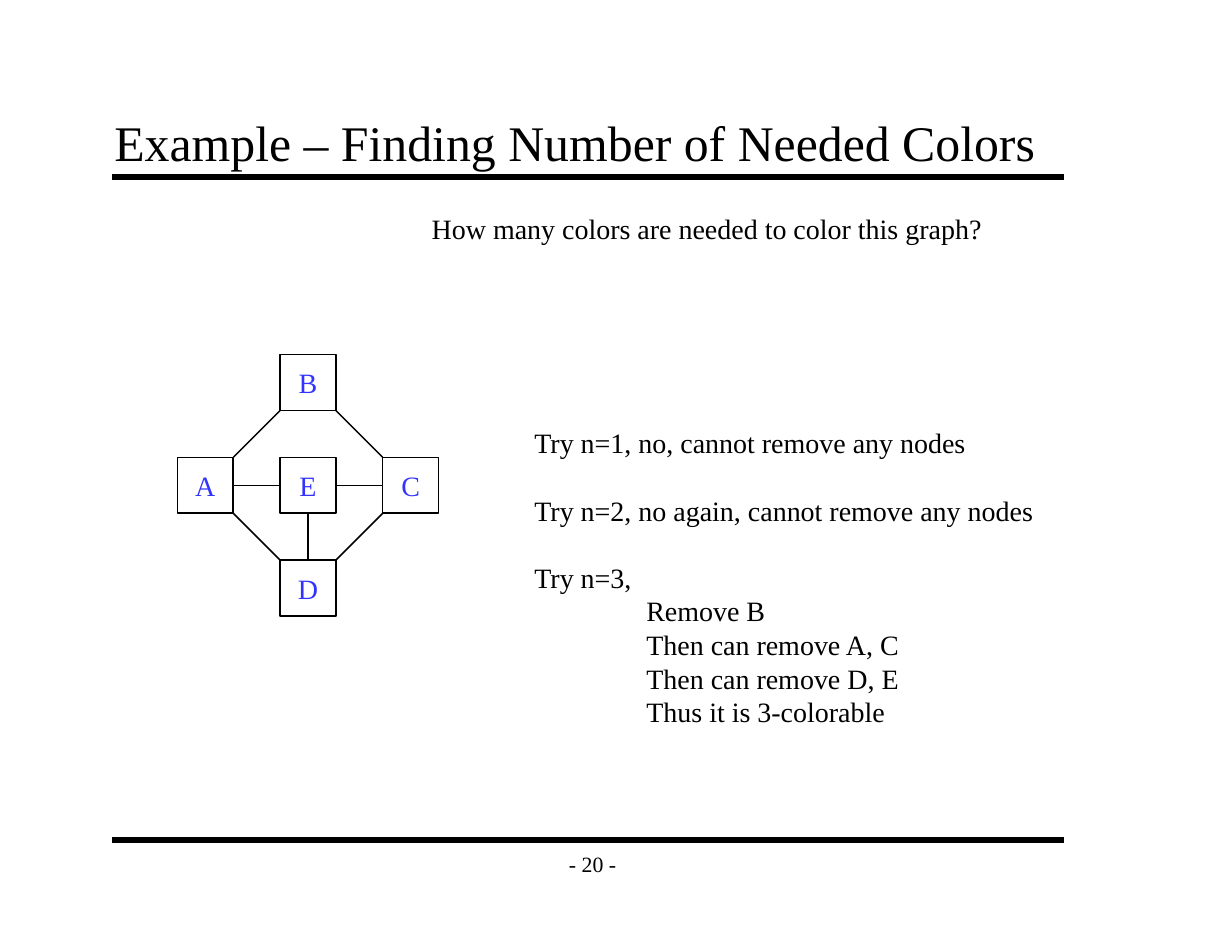
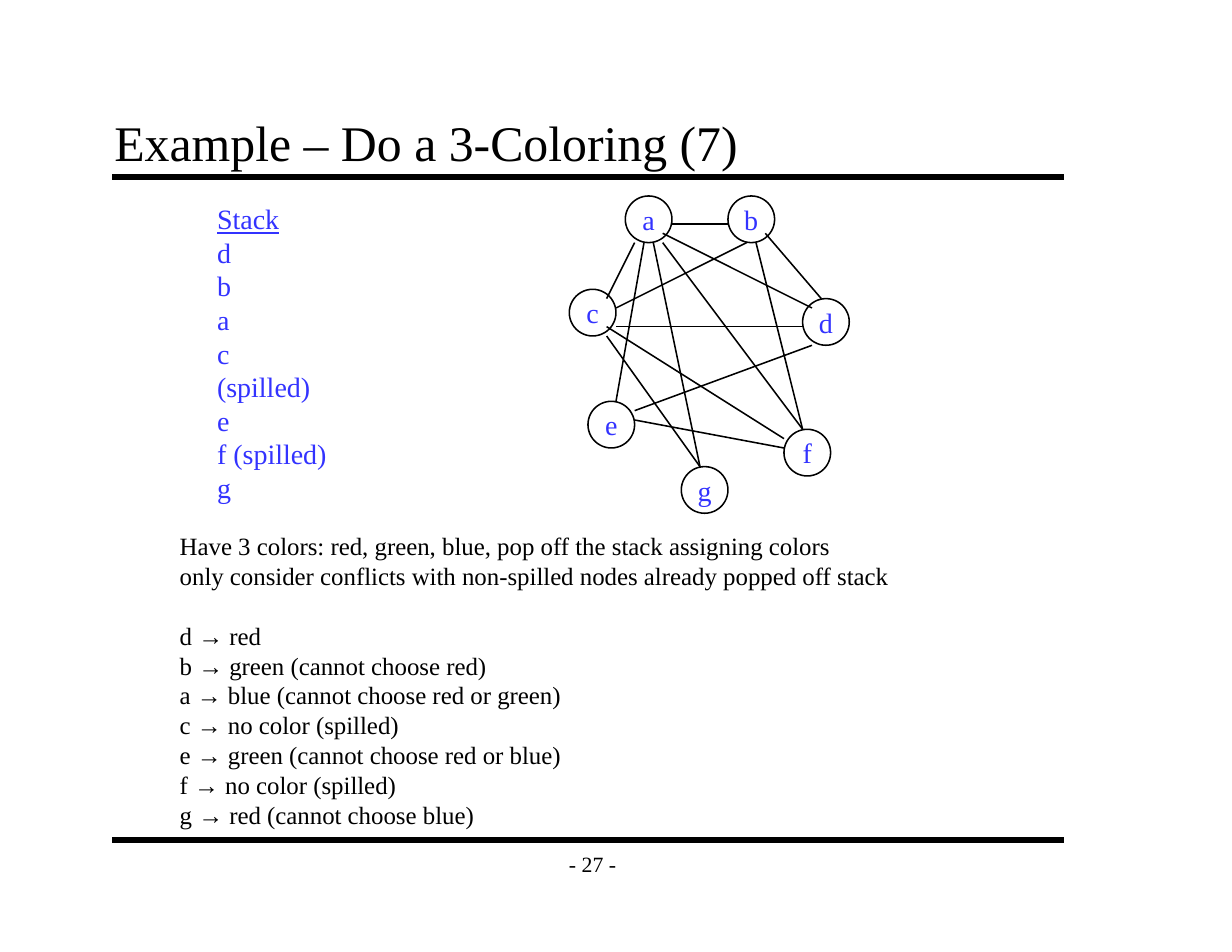
"""Builds two slides on graph coloring: counting the needed colors and a 3-coloring."""
from dataclasses import dataclass

from lxml import etree
from pptx import Presentation
from pptx.dml.color import RGBColor
from pptx.enum.shapes import MSO_CONNECTOR, MSO_SHAPE
from pptx.enum.text import MSO_ANCHOR, PP_ALIGN
from pptx.oxml.ns import qn
from pptx.util import Emu, Pt

STRAIGHT = MSO_CONNECTOR.STRAIGHT
SQUARE, CIRCLE = MSO_SHAPE.RECTANGLE, MSO_SHAPE.OVAL
TOP, MIDDLE, BOTTOM = MSO_ANCHOR.TOP, MSO_ANCHOR.MIDDLE, MSO_ANCHOR.BOTTOM
LEFT, CENTER = PP_ALIGN.LEFT, PP_ALIGN.CENTER
PX = 9525
GRID = 8


@dataclass(frozen=True)
class Theme:
    font: str = "Times New Roman"
    ink: RGBColor = RGBColor(0x00, 0x00, 0x00)
    accent: RGBColor = RGBColor(0x33, 0x33, 0xFF)
    title: int = 32
    body: int = 18
    detail: int = 16
    footer: int = 14
    leading: float = 1.2
    rule: int = 4
    edge: int = 1


THEME = Theme()


def add_text(slide, box, lines, size, color=THEME.ink, align=LEFT, anchor=TOP,
             inset=(10, 5), outline=None):
    """Write one paragraph per line, in a text box or an outlined shape."""
    place = [Emu(value * PX) for value in box]
    if outline is None:
        holder = slide.shapes.add_textbox(*place)
    else:
        holder = slide.shapes.add_shape(outline, *place)
        holder.shadow.inherit = False
        holder.fill.background()
        holder.line.color.rgb = THEME.ink
        holder.line.width = Pt(THEME.edge)
    frame = holder.text_frame
    frame.word_wrap = False
    frame.vertical_anchor = anchor
    frame.margin_left = frame.margin_right = Emu(inset[0] * PX)
    frame.margin_top = frame.margin_bottom = Emu(inset[1] * PX)
    frame.text = "\n".join(lines)
    for paragraph in frame.paragraphs:
        paragraph.alignment = align
        paragraph.line_spacing = Pt(size * THEME.leading)
        paragraph.font.name = THEME.font
        paragraph.font.size = Pt(size)
        paragraph.font.color.rgb = color
    return frame.paragraphs


def add_line(slide, x1, y1, x2, y2, width):
    """Draw a straight line without a shadow."""
    line = slide.shapes.add_connector(STRAIGHT, *(Emu(v * PX) for v in (x1, y1, x2, y2)))
    line.line.color.rgb = THEME.ink
    line.line.width = Pt(width)
    etree.SubElement(line._element.spPr, qn("a:effectLst"))


deck = Presentation()
deck.slide_width, deck.slide_height = Emu(1056 * PX), Emu(816 * PX)

slides = []
for title, number in (("Example – Finding Number of Needed Colors", 20),
                      ("Example – Do a 3-Coloring (7)", 27)):
    slide = deck.slides.add_slide(deck.slide_layouts[6])
    for rule_y in (152, 720):
        add_line(slide, 96, rule_y, 912, rule_y, THEME.rule)
    add_text(slide, (472, 720, 72, 40), [f"- {number} -"], THEME.footer,
             align=CENTER, anchor=MIDDLE)
    heading = add_text(slide, (88, 88, 832, 64), [title], THEME.title, anchor=BOTTOM)
    slides.append(slide)
counting, coloring = slides

SIDE, STEP = 48, 88
HALF = SIDE // 2
cells = {"A": (0, 1), "B": (1, 0), "E": (1, 1), "D": (1, 2), "C": (2, 1)}
for name, (column, row) in cells.items():
    add_text(counting, (152 + column * STEP, 304 + row * STEP, SIDE, SIDE), [name],
             THEME.body, THEME.accent, CENTER, MIDDLE, outline=SQUARE)
for start, end in ("AB", "BC", "AD", "DC", "AE", "EC", "ED"):
    (column, row), (end_column, end_row) = cells[start], cells[end]
    across, down = end_column - column, end_row - row
    x = 152 + HALF + column * STEP + across * HALF
    y = 304 + HALF + row * STEP + down * HALF
    gap = STEP - SIDE
    add_line(counting, x, y, x + across * gap, y + down * gap, THEME.edge)

add_text(counting, (360, 176, 492, 38),
         ["How many colors are needed to color this graph?"], THEME.body)
attempts = add_text(counting, (448, 360, 448, 269), [
    "Try n=1, no, cannot remove any nodes",
    "Try n=2, no again, cannot remove any nodes",
    "Try n=3,",
    "Remove B",
    "Then can remove A, C",
    "Then can remove D, E",
    "Thus it is 3-colorable",
], THEME.body)
for attempt in attempts[1:3]:
    attempt.space_before = Pt(THEME.body * THEME.leading)
for removal in attempts[3:]:
    removal._p.get_or_add_pPr().set("marL", str(96 * PX))

stack = add_text(coloring, (176, 168, 116, 240),
                 ["Stack", "d", "b", "a", "c (spilled)", "e", "f (spilled)", "g"],
                 THEME.body, THEME.accent)
stack[0].font.underline = True

nodes = {"a": (67, 21), "b": (78, 21), "c": (61, 31), "d": (86, 32),
         "e": (63, 43), "f": (84, 46), "g": (73, 50)}
for name, (column, row) in nodes.items():
    add_text(coloring, (column * GRID, row * GRID, 5 * GRID, 5 * GRID), [name],
             THEME.body, THEME.accent, CENTER, MIDDLE, outline=CIRCLE)
conflicts = [
    (65, 32, 68, 26), (66, 33, 80, 26), (66, 35, 86, 35), (65, 35, 84, 47),
    (65, 36, 75, 50), (72, 24, 78, 24), (71, 25, 87, 33), (71, 26, 86, 46),
    (70, 26, 75, 50), (69, 26, 66, 43), (82, 25, 88, 32), (81, 26, 86, 46),
    (87, 37, 68, 44), (68, 45, 84, 48),
]
for conflict in conflicts:
    add_line(coloring, *(value * GRID for value in conflict), THEME.edge)

assignments = add_text(coloring, (144, 450, 631, 266), [
    "Have 3 colors: red, green, blue, pop off the stack assigning colors",
    "only consider conflicts with non-spilled nodes already popped off stack",
    "d → red",
    "b → green (cannot choose red)",
    "a → blue (cannot choose red or green)",
    "c → no color (spilled)",
    "e → green (cannot choose red or blue)",
    "f → no color (spilled)",
    "g → red (cannot choose blue)",
], THEME.detail)
assignments[2].space_before = Pt(THEME.detail * THEME.leading)

deck.save("out.pptx")
